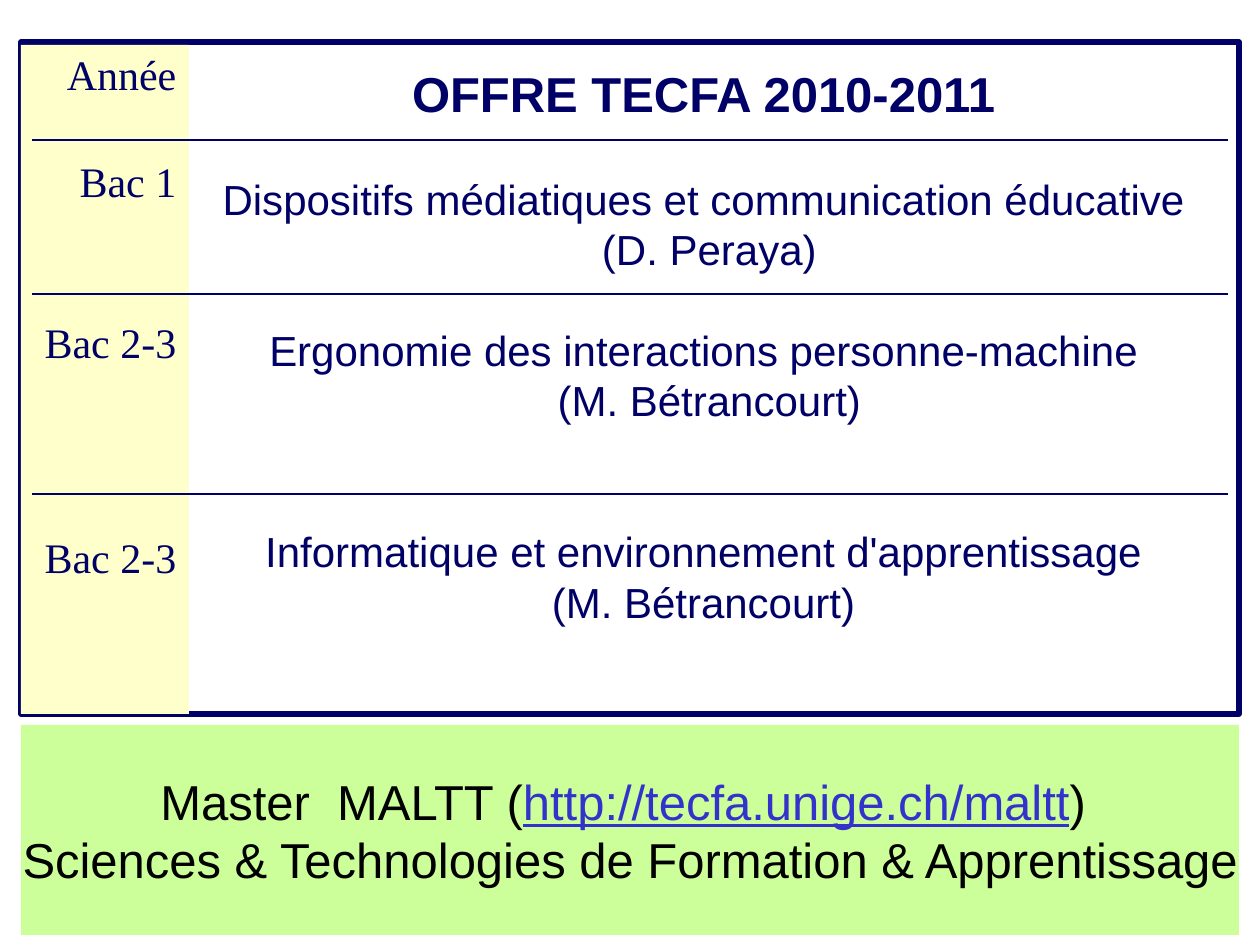
from pptx import Presentation
from pptx.dml.color import RGBColor
from pptx.enum.shapes import MSO_CONNECTOR, MSO_SHAPE
from pptx.enum.text import MSO_ANCHOR, MSO_AUTO_SIZE, PP_ALIGN
from pptx.oxml.ns import qn
from pptx.util import Emu, Pt
from lxml.etree import SubElement

COLORS = {
    "navy": "000066",
    "white": "FFFFFF",
    "cream": "FFFFCC",
    "green": "CCFF99",
    "black": "000000",
    "link": "3333CC",
}
LEFT, WIDTH = 21, 1218
YEAR_STEP, YEAR_LINE = 30.7, 26  # points per row of the year column

# Text, and rows of space above it
YEARS = [("Année", 0), ("Bac 1", 1), ("Bac 2-3", 2), ("Bac 2-3", 3)]
COURSES = [
    ("Dispositifs médiatiques et communication éducative", 1),
    (" (D. Peraya)", 0),
    ("Ergonomie des interactions personne-machine", 1),
    (" (M. Bétrancourt)", 0),
    ("Informatique et environnement d'apprentissage", 2),
    ("(M. Bétrancourt)", 0),
]


def px(n):
    return Emu(round(n * 914400 / 126))


def rgb(name):
    return RGBColor.from_string(COLORS[name])


def add_run(p, text, size=24, font="Arial", color="navy", bold=False,
            underline=False):
    r = p.add_run()
    r.text = text
    r.font.size = Pt(size)
    r.font.name = font
    r.font.color.rgb = rgb(color)
    r.font.bold = bold
    r.font.underline = underline


def add_paragraph(tf, align, line, before=0):
    p = tf.paragraphs[0]
    if p.runs:
        p = tf.add_paragraph()
    p.alignment = align
    p.line_spacing = Pt(line)
    p.space_before = Pt(before)
    return p


def add_box(s, top, height, fill, line=None):
    sp = s.shapes.add_shape(MSO_SHAPE.RECTANGLE, px(LEFT), px(top),
                            px(WIDTH), px(height))
    sp.shadow.inherit = False
    sp.fill.solid()
    sp.fill.fore_color.rgb = rgb(fill)
    if line:
        sp.line.color.rgb = rgb(line)
        sp.line.width = Pt(3)
    else:
        sp.line.fill.background()
    return sp


def add_rule(s, y):
    ln = s.shapes.add_connector(MSO_CONNECTOR.STRAIGHT, px(32), px(y),
                                px(1228), px(y))
    ln.line.color.rgb = rgb("navy")
    ln.line.width = Pt(0.75)
    SubElement(ln._element.spPr, qn("a:effectLst"))


def add_courses(s):
    sp = s.shapes.add_textbox(px(189), px(55), px(1029), px(581))
    tf = sp.text_frame
    tf.word_wrap = True
    tf.margin_top = px(9)
    p = add_paragraph(tf, PP_ALIGN.CENTER, 33.6)
    add_run(p, "OFFRE TECFA 2010-2011", size=28, bold=True)
    for text, gap in COURSES:
        p = add_paragraph(tf, PP_ALIGN.CENTER, 28.8, before=28.8 * gap)
        add_run(p, text)


def fill_years(s, body):
    s.shapes._spTree.append(body._element)  # bring above the frame
    body.left, body.top = px(LEFT), px(45)
    body.width, body.height = px(168), px(669)
    body.fill.solid()
    body.fill.fore_color.rgb = rgb("cream")
    tf = body.text_frame
    tf.auto_size = MSO_AUTO_SIZE.NONE
    tf.vertical_anchor = MSO_ANCHOR.TOP
    tf.margin_top = px(8)
    for text, gap in YEARS:
        before = YEAR_STEP * (gap + 1) - YEAR_LINE if gap else 0
        p = add_paragraph(tf, PP_ALIGN.RIGHT, YEAR_LINE, before=before)
        pPr = p._p.get_or_add_pPr()
        pPr.set("marL", str(px(48)))
        pPr.set("indent", str(-px(48)))
        SubElement(pPr, qn("a:buNone"))
        add_run(p, text, font="Times New Roman")


def add_master(s):
    tf = add_box(s, 725, 210, "green").text_frame
    tf.word_wrap = False
    tf.vertical_anchor = MSO_ANCHOR.MIDDLE
    p = add_paragraph(tf, PP_ALIGN.CENTER, 33.6)
    add_run(p, "Master  MALTT (", size=28, color="black")
    add_run(p, "http://tecfa.unige.ch/maltt", size=28, color="link",
            underline=True)
    add_run(p, ") ", size=28, color="black")
    p = add_paragraph(tf, PP_ALIGN.CENTER, 33.6)
    add_run(p, "Sciences & Technologies de Formation & Apprentissage",
            size=28, color="black")


def main():
    prs = Presentation()
    prs.slide_width, prs.slide_height = px(1260), px(945)
    s = prs.slides.add_slide(prs.slide_layouts[1])
    title, body = s.placeholders
    title._element.getparent().remove(title._element)

    # Framed course table
    add_box(s, 42, 672, "white", line="navy")
    add_courses(s)
    fill_years(s, body)
    for y in (140, 294, 494):
        add_rule(s, y)

    # Master programme banner
    add_master(s)
    prs.save("out.pptx")


if __name__ == "__main__":
    main()
